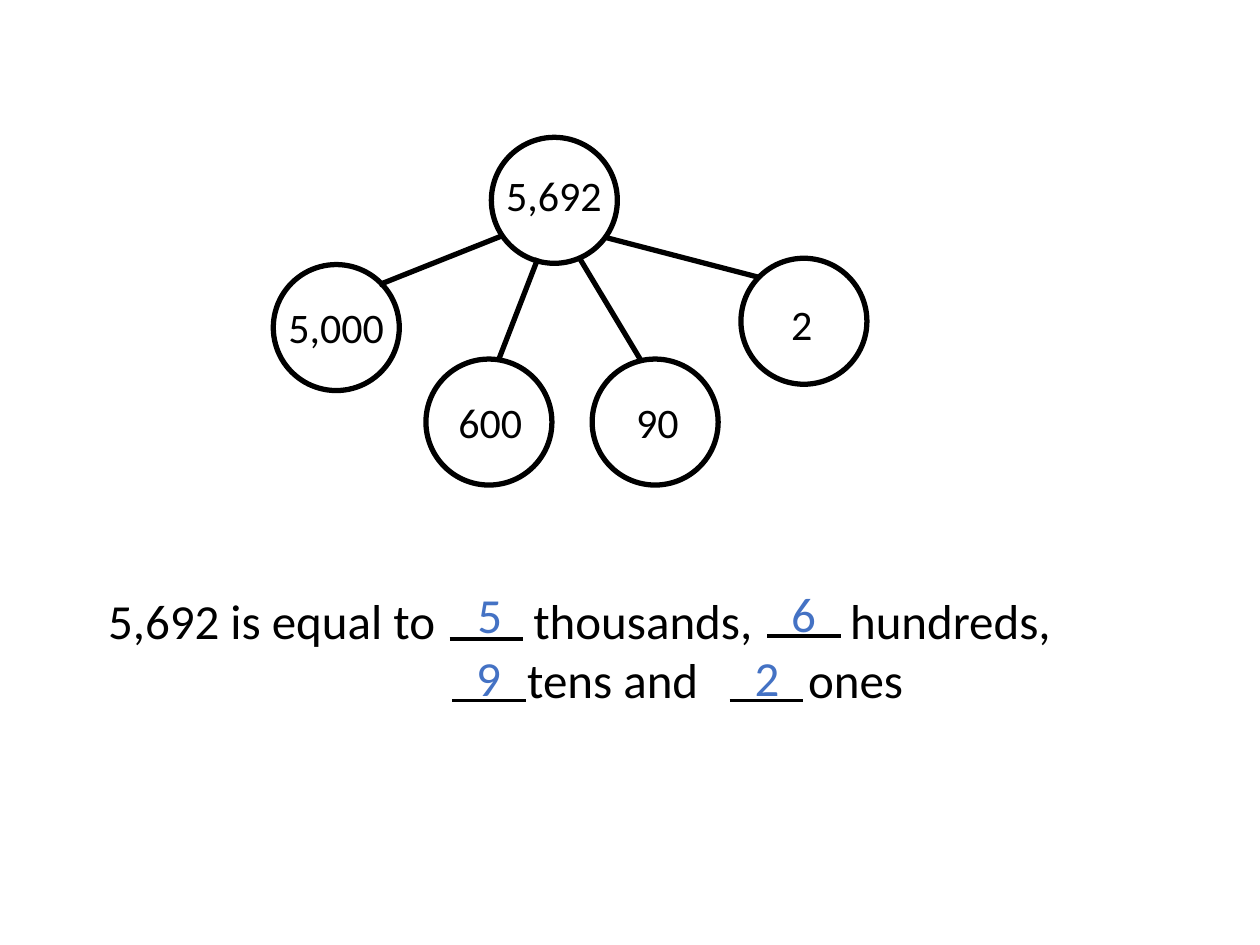
from lxml.etree import SubElement
from pptx import Presentation
from pptx.dml.color import RGBColor
from pptx.enum.shapes import MSO_CONNECTOR, MSO_SHAPE
from pptx.oxml.ns import qn
from pptx.util import Pt

BLACK, WHITE, BLUE = "000000", "FFFFFF", "4472C4"
DIAMETER = 72
BLANK_WIDTH = 42

# value, circle left and top, label left and top
NODES = [
    ("5,692", 280.8, 78.5, 282.2, 93.6),
    ("5,000", 156.2, 151.2, 157.7, 168.5),
    ("600", 243.4, 205.2, 254.9, 223.2),
    ("90", 338.4, 205.2, 356.4, 223.2),
    ("2", 423.4, 147.6, 445, 167),
]
BRANCHES = [
    (287.3, 134.6, 216.7, 162.7),
    (307.4, 147.6, 285.1, 205.2),
    (331.2, 147.6, 365.8, 205.2),
    (344.9, 135.4, 433.4, 158.4),
]
# text and tab stops of each sentence line
SENTENCE = [
    ("5,692 is equal to\tthousands,\thundreds,", (243, 424)),
    ("\ttens and\tones", (239.5, 400)),
]
# digit, its left and top, blank left and height
ANSWERS = [
    ("5", 265.7, 330.5, 257, 365),
    ("6", 445, 329.8, 438.5, 363.6),
    ("9", 265, 366.5, 258.5, 400.3),
    ("2", 424.1, 366.5, 416.9, 400.3),
]


def color(hex_text):
    return RGBColor.from_string(hex_text)


def add_text(p, text, size=28, fill=BLACK, font="Calibri", tabs=()):
    if tabs:
        tab_list = SubElement(p._p.get_or_add_pPr(), qn("a:tabLst"))
        for stop in tabs:
            SubElement(tab_list, qn("a:tab"), pos=str(Pt(stop)), algn="l")
    r = p.add_run()
    r.text = text
    r.font.name = font
    r.font.size = Pt(size)
    r.font.color.rgb = color(fill)


class SlideBuilder:
    def __init__(self, slide, ink=BLACK, paper=WHITE):
        self.s = slide
        self.ink = ink
        self.paper = paper

    def circle(self, x, y):
        sp = self.s.shapes.add_shape(
            MSO_SHAPE.OVAL, Pt(x), Pt(y), Pt(DIAMETER), Pt(DIAMETER))
        sp.shadow.inherit = False
        sp.fill.solid()
        sp.fill.fore_color.rgb = color(self.paper)
        sp.line.color.rgb = color(self.ink)
        sp.line.width = Pt(3)

    def line(self, x1, y1, x2, y2, width=3):
        sp = self.s.shapes.add_connector(
            MSO_CONNECTOR.STRAIGHT, Pt(x1), Pt(y1), Pt(x2), Pt(y2))
        sp.line.color.rgb = color(self.ink)
        sp.line.width = Pt(width)
        SubElement(sp._element.spPr, qn("a:effectLst"))

    def text_box(self, x, y, w, h):
        tf = self.s.shapes.add_textbox(Pt(x), Pt(y), Pt(w), Pt(h)).text_frame
        tf.word_wrap = True
        return tf

    def label(self, text, x, y, w, h, **style):
        add_text(self.text_box(x, y, w, h).paragraphs[0], text, **style)

    def sentence(self, lines, x, y, w, h):
        """Write one paragraph per line, with gaps made by tab stops."""
        tf = self.text_box(x, y, w, h)
        for i, (text, tabs) in enumerate(lines):
            p = tf.add_paragraph() if i else tf.paragraphs[0]
            add_text(p, text, tabs=tabs)


def main():
    prs = Presentation()
    prs.slide_width, prs.slide_height = Pt(720), Pt(540)
    builder = SlideBuilder(prs.slides.add_slide(prs.slide_layouts[6]))

    for _, x, y, _, _ in NODES:
        builder.circle(x, y)
    for ends in BRANCHES:
        builder.line(*ends)
    for value, _, _, x, y in NODES:
        builder.label(value, x, y, 103.7, 36, size=24)

    builder.sentence(SENTENCE, 54.7, 334.1, 588.2, 74.9)
    for digit, x, y, blank_x, blank_y in ANSWERS:
        builder.line(blank_x, blank_y, blank_x + BLANK_WIDTH, blank_y, width=2.25)
        builder.label(digit, x, y, 65.5, 41, fill=BLUE)

    prs.save("out.pptx")


if __name__ == "__main__":
    main()
